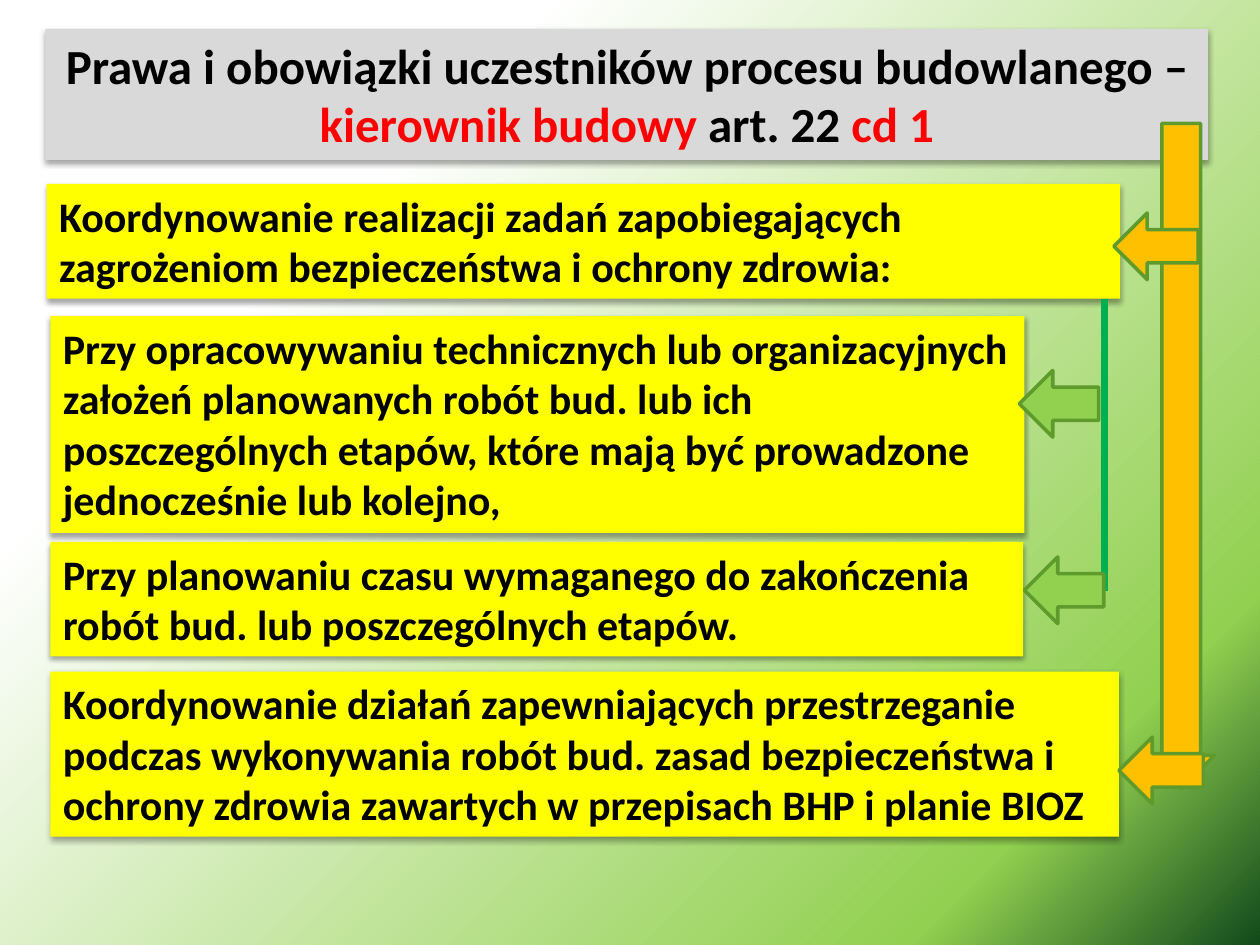
from dataclasses import dataclass
from lxml import etree
from pptx import Presentation
from pptx.dml.color import RGBColor as Rgb
from pptx.enum.shapes import MSO_CONNECTOR as Link, MSO_SHAPE as Kind
from pptx.enum.text import MSO_AUTO_SIZE as Fit, MSO_ANCHOR as Anchor, PP_ALIGN as Align
from pptx.oxml import parse_xml
from pptx.oxml.ns import nsdecls, qn
from pptx.util import Inches, Pt

COLS, ROWS = 100, 75  # grid of the slide


@dataclass(frozen=True)
class Theme:
    font: str = "Calibri"
    head: int = 28
    body: int = 24
    ink: str = "000000"
    red: str = "FF0000"
    gray: str = "D9D9D9"
    yellow: str = "FFFF00"
    orange: str = "FFC000"
    lime: str = "92D050"
    edge: str = "5E9B2C"
    stem: str = "00B050"
    # position, colour, opacity, all positions and opacities in percent
    back: tuple = ((0, "124A1B", 90), (16, "92D050", 61), (75, "FFFFFF", 0))


@dataclass(frozen=True)
class Box:
    """An area in columns and rows of the grid."""
    x: float
    y: float
    w: float
    h: float

    def sub(self, x, y, w, h):
        return Box(self.x + x, self.y + y, w, h)

    def size(self):
        col, row = Inches(10) / COLS, Inches(7.5) / ROWS
        return [round(n * u) for n, u in
                ((self.x, col), (self.y, row), (self.w, col), (self.h, row))]


T = Theme()


def paint(slide):
    """Radial background centred on the lower right corner."""
    stops = "".join(
        f'<a:gs pos="{pos * 1000}"><a:srgbClr val="{tone}">'
        f'<a:alpha val="{seen * 1000}"/></a:srgbClr></a:gs>'
        for pos, tone, seen in T.back)
    back = parse_xml(
        f'<p:bg {nsdecls("p", "a")}><p:bgPr><a:gradFill rotWithShape="1">'
        f'<a:gsLst>{stops}</a:gsLst><a:path path="circle">'
        '<a:fillToRect l="100000" t="100000"/></a:path></a:gradFill>'
        '<a:effectLst/></p:bgPr></p:bg>')
    slide.element.cSld.insert(0, back)


def shade(shape):
    """Soft shadow below a panel."""
    shape.shadow.inherit = False
    glow = shape.element.spPr.find(qn("a:effectLst"))
    glow.append(parse_xml(
        f'<a:outerShdw {nsdecls("a")} blurRad="{Pt(3.1)}" dist="{Pt(1.8)}" '
        'dir="5400000" rotWithShape="0"><a:srgbClr val="000000">'
        '<a:alpha val="35000"/></a:srgbClr></a:outerShdw>'))


def panel(slide, box, fill, runs, size, align=Align.LEFT):
    """Filled text panel; runs are pairs of text and colour."""
    shape = slide.shapes.add_shape(Kind.RECTANGLE, *box.size())
    shape.fill.solid()
    shape.fill.fore_color.rgb = Rgb.from_string(fill)
    shape.line.fill.background()
    shade(shape)
    frame = shape.text_frame
    frame.word_wrap = True
    frame.auto_size = Fit.SHAPE_TO_FIT_TEXT
    frame.vertical_anchor = Anchor.TOP
    para = frame.paragraphs[0]
    para.alignment = align
    font = para.font
    font.name, font.size, font.bold = T.font, Pt(size), True
    for text, tone in runs:
        run = para.add_run()
        run.text = text
        run.font.color.rgb = Rgb.from_string(tone)


def arrow(slide, box, fill, turn=0):
    shape = slide.shapes.add_shape(Kind.DOWN_ARROW, *box.size())
    shape.rotation = turn
    shape.shadow.inherit = False
    shape.fill.solid()
    shape.fill.fore_color.rgb = Rgb.from_string(fill)
    shape.line.color.rgb = Rgb.from_string(T.edge)
    shape.line.width = Pt(2)
    return shape


def left(slide, box, tip, mid, span, fill):
    """Left arrow given by its tip, middle row and length."""
    wide = 5.3
    place = box.sub(tip + (span - wide) / 2, mid - span / 2, wide, span)
    arrow(slide, place, fill, 90)


def head(slide, box):
    runs = (("Prawa i obowiązki uczestników procesu budowlanego – ", T.ink),
            ("kierownik budowy", T.red), (" art. 22 ", T.ink), ("cd 1", T.red))
    panel(slide, box, T.gray, runs, T.head, Align.CENTER)


def duties(slide, box):
    """Main duties, with the two narrower sub-points between them."""
    rows = (
        (0, 0, 85.2, 9.1, "Koordynowanie realizacji zadań zapobiegających "
         "zagrożeniom bezpieczeństwa i ochrony zdrowia:"),
        (0.3, 10.5, 77.3, 17.2, "Przy opracowywaniu technicznych lub "
         "organizacyjnych założeń planowanych robót bud. lub ich poszczególnych "
         "etapów, które mają być prowadzone jednocześnie lub kolejno,"),
        (0.3, 28.4, 77.2, 9.1, "Przy planowaniu czasu wymaganego do zakończenia "
         "robót bud. lub poszczególnych etapów."),
        (0.3, 38.7, 84.8, 13.1, "Koordynowanie działań zapewniających "
         "przestrzeganie podczas wykonywania robót bud. zasad bezpieczeństwa i "
         "ochrony zdrowia zawartych w przepisach BHP i planie BIOZ"))
    for *place, text in rows:
        panel(slide, box.sub(*place), T.yellow, ((text, T.ink),), T.body)


def trunk(slide, box):
    """Long arrow down the right side."""
    shape = arrow(slide, box, T.orange)
    shape.adjustments[0] = 0.58


def twigs(slide, box):
    """Green stem and the arrows that point at the panels."""
    for tip, mid in ((0.5, 4.95), (0.9, 46.55)):
        left(slide, box.sub(7, 0, 0, 0), tip, mid, 6.7, T.orange)
    x, y, _, tall = box.sub(6.8, 9.1, 0, 23.2).size()
    stem = slide.shapes.add_connector(Link.STRAIGHT, x, y, x, y + tall)
    stem.line.color.rgb = Rgb.from_string(T.stem)
    stem.line.width = Pt(4)
    etree.SubElement(stem.element.spPr, qn("a:effectLst"))
    for tip, mid in ((0, 17.45), (0.4, 32.25)):
        left(slide, box, tip, mid, 6.3, T.lime)


def main():
    deck = Presentation()
    deck.slide_width, deck.slide_height = Inches(10), Inches(7.5)
    slide = deck.slides.add_slide(deck.slide_layouts[6])
    paint(slide)
    head(slide, Box(3.6, 2.3, 92.3, 10.4))
    trunk(slide, Box(91.1, 9.8, 5.3, 52.8))
    duties(slide, Box(3.7, 14.6, 85.2, 51.8))
    twigs(slide, Box(80.9, 14.6, 15, 51.8))
    deck.save("out.pptx")


if __name__ == "__main__":
    main()
